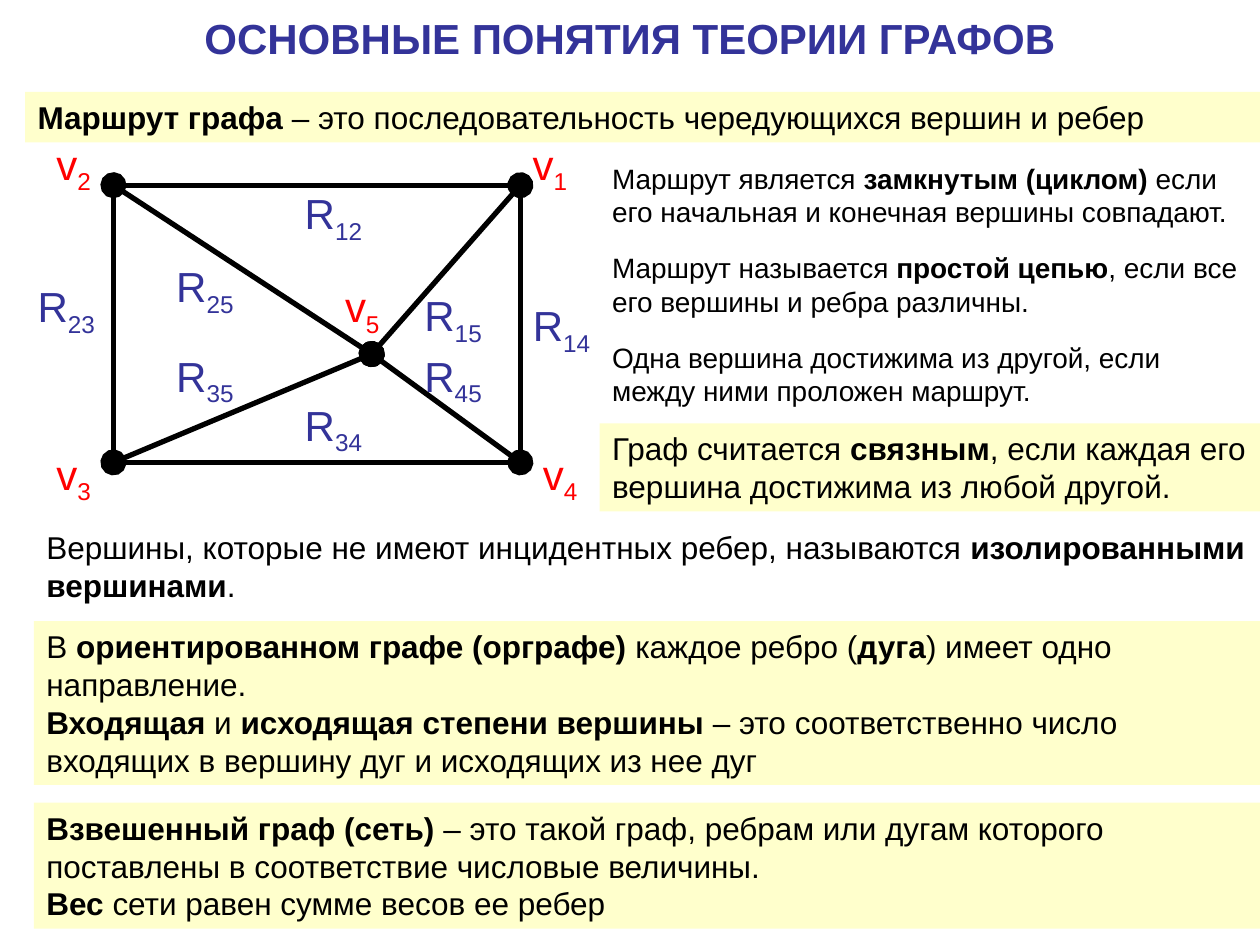
from lxml.etree import SubElement
from pptx import Presentation
from pptx.dml.color import RGBColor
from pptx.enum.shapes import MSO_CONNECTOR as Connector, MSO_SHAPE as Shape
from pptx.enum.text import MSO_ANCHOR as Anchor, PP_ALIGN as Align
from pptx.oxml.ns import qn
from pptx.util import Inches, Pt

BLACK, WHITE, CREAM, RED, BLUE = "000000", "FFFFFF", "FFFFCC", "FF0000", "333399"
RIGHT_COLUMN, LEFT_MARGIN = 4.76, 0.27

VERTICES = {1: (4.13, 1.47), 2: (0.9, 1.47), 3: (0.9, 3.67), 4: (4.13, 3.67), 5: (2.95, 2.81)}
EDGES = [(3, 2), (4, 1), (4, 5), (5, 1), (2, 1), (4, 3), (5, 3), (5, 2)]
VERTEX_LABELS = {"4": (4.21, 3.51), "1": (4.13, 1.05), "2": (0.35, 1.05),
                 "3": (0.35, 3.51), "5": (2.64, 2.18)}
EDGE_LABELS = {"12": (2.32, 1.44), "14": (4.13, 2.33), "15": (3.27, 2.25),
               "25": (1.3, 2.02), "23": (0.2, 2.18), "35": (1.3, 2.73),
               "45": (3.27, 2.73), "34": (2.32, 3.12)}

DEFINITIONS = [
    (0.2, 0.73, 0.4, CREAM, 18,
     ["**Маршрут графа** – это последовательность чередующихся вершин и ребер"]),
    (RIGHT_COLUMN, 1.23, 0.64, WHITE, 16,
     ["Маршрут является **замкнутым (циклом)** если его начальная и конечная вершины совпадают."]),
    (RIGHT_COLUMN, 1.94, 0.64, WHITE, 16,
     ["Маршрут называется **простой цепью**, если все его вершины и ребра различны."]),
    (RIGHT_COLUMN, 3.36, 0.7, CREAM, 18,
     ["Граф считается **связным**, если каждая его вершина достижима из любой другой."]),
    (RIGHT_COLUMN, 2.65, 0.64, WHITE, 16,
     ["Одна вершина достижима из другой, если между ними проложен маршрут."]),
    (LEFT_MARGIN, 4.14, 0.7, WHITE, 18,
     ["Вершины, которые не имеют инцидентных ребер, называются **изолированными вершинами**."]),
    (LEFT_MARGIN, 4.93, 1.3, CREAM, 18,
     ["В **ориентированном графе (орграфе)** каждое ребро (**дуга**) имеет одно направление.",
      "**Входящая** и **исходящая степени вершины** – это соответственно число входящих "
      "в вершину дуг и исходящих из нее дуг"]),
    (LEFT_MARGIN, 6.37, 1, CREAM, 18,
     ["**Взвешенный граф (сеть)** – это такой граф, ребрам или дугам которого поставлены "
      "в соответствие числовые величины.",
      "**Вес** сети равен сумме весов ее ребер"]),
]


def color(value):
    """Return the colour for a hex string."""
    return RGBColor.from_string(value)


def add_run(paragraph, text, size, text_color, bold=False):
    """Append a formatted run and return it."""
    run = paragraph.add_run()
    run.text = text
    run.font.name = "Arial"
    run.font.size = Pt(size)
    run.font.bold = bold
    run.font.color.rgb = color(text_color)
    return run


def add_edge(slide, start, end):
    """Connect two vertices, with dots at both ends of edges that meet at vertex 5."""
    points = [Inches(value) for value in VERTICES[start] + VERTICES[end]]
    edge = slide.shapes.add_connector(Connector.STRAIGHT, *points)
    edge.line.color.rgb = color(BLACK)
    edge.line.width = Pt(3)
    if 5 in (start, end):
        line = edge.line._get_or_add_ln()
        for tag in ("a:headEnd", "a:tailEnd"):
            SubElement(line, qn(tag), type="oval", w="lg", len="lg")
    SubElement(edge._element.spPr, qn("a:effectLst"))


def add_label(slide, letter, index, position, width, text_color):
    """Add a letter with a subscript index."""
    left, top = position
    box = slide.shapes.add_textbox(Inches(left), Inches(top), Inches(width), Inches(0.5))
    box.text_frame.word_wrap = True
    paragraph = box.text_frame.paragraphs[0]
    add_run(paragraph, letter, 24, text_color)
    subscript = add_run(paragraph, index, 24, text_color)
    subscript._r.get_or_add_rPr().set("baseline", "-25000")


def add_panel(slide, left, top, height, fill):
    """Add a filled rectangle that reaches the right slide edge; return its text frame."""
    panel = slide.shapes.add_shape(
        Shape.RECTANGLE, Inches(left), Inches(top), Inches(10 - left), Inches(height))
    panel.shadow.inherit = False
    panel.fill.solid()
    panel.fill.fore_color.rgb = color(fill)
    panel.line.fill.background()
    return panel.text_frame


def add_definition(slide, left, top, height, fill, size, texts):
    """Add a panel of paragraphs whose terms between double asterisks are bold."""
    frame = add_panel(slide, left, top, height, fill)
    frame.word_wrap = True
    frame.vertical_anchor = Anchor.TOP
    for number, text in enumerate(texts):
        paragraph = frame.add_paragraph() if number else frame.paragraphs[0]
        paragraph.alignment = Align.LEFT
        for position, part in enumerate(text.split("**")):
            if part:
                add_run(paragraph, part, size, BLACK, position % 2 == 1)


def add_title(slide, text):
    """Add the centred title across the slide."""
    frame = add_panel(slide, 0, 0, 0.6, WHITE)
    frame.word_wrap = False
    frame.vertical_anchor = Anchor.MIDDLE
    frame.paragraphs[0].alignment = Align.CENTER
    add_run(frame.paragraphs[0], text, 24, BLUE, True)


def main():
    """Build and save the presentation."""
    presentation = Presentation()
    presentation.slide_width = Inches(10)
    presentation.slide_height = Inches(7.5)
    slide = presentation.slides.add_slide(presentation.slide_layouts[6])
    for start, end in EDGES:
        add_edge(slide, start, end)
    for index, position in VERTEX_LABELS.items():
        add_label(slide, "v", index, position, 0.63, RED)
    for index, position in EDGE_LABELS.items():
        add_label(slide, "R", index, position, 0.79, BLUE)
    for definition in DEFINITIONS:
        add_definition(slide, *definition)
    add_title(slide, "ОСНОВНЫЕ ПОНЯТИЯ ТЕОРИИ ГРАФОВ")
    presentation.save("out.pptx")


if __name__ == "__main__":
    main()
